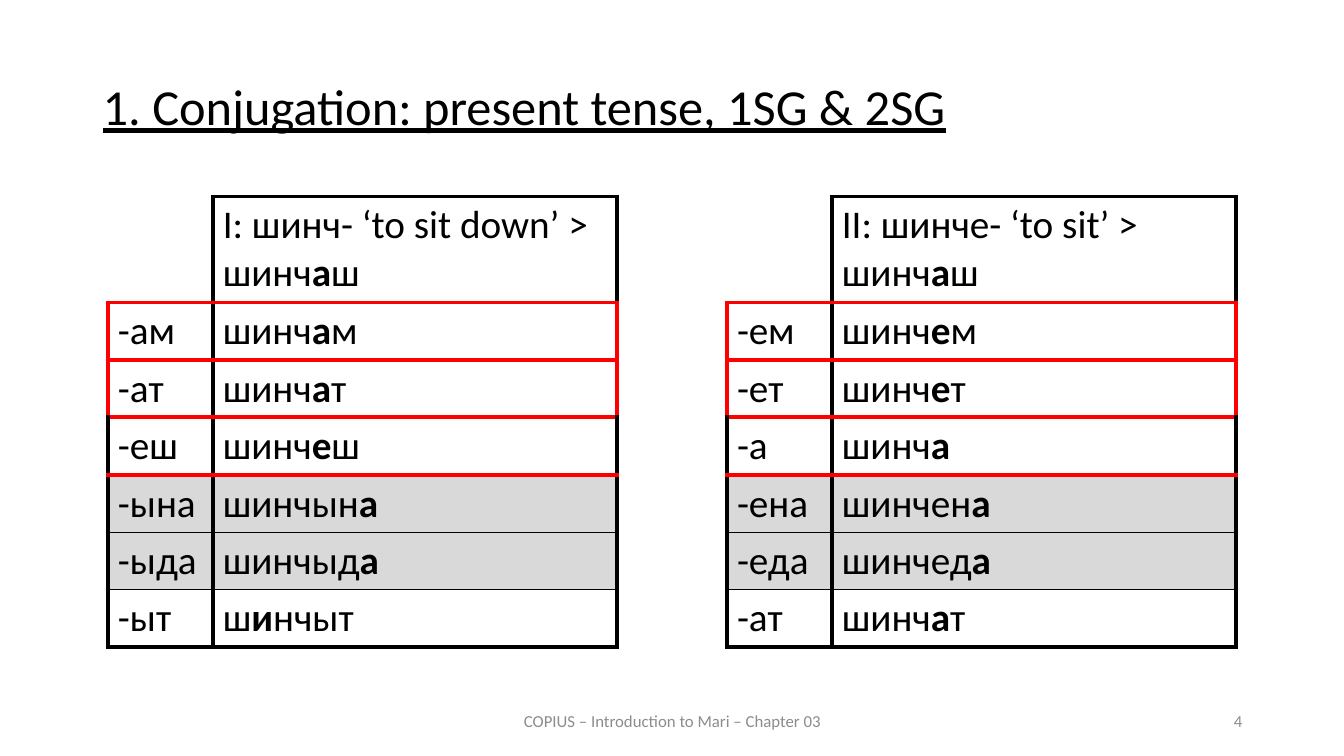
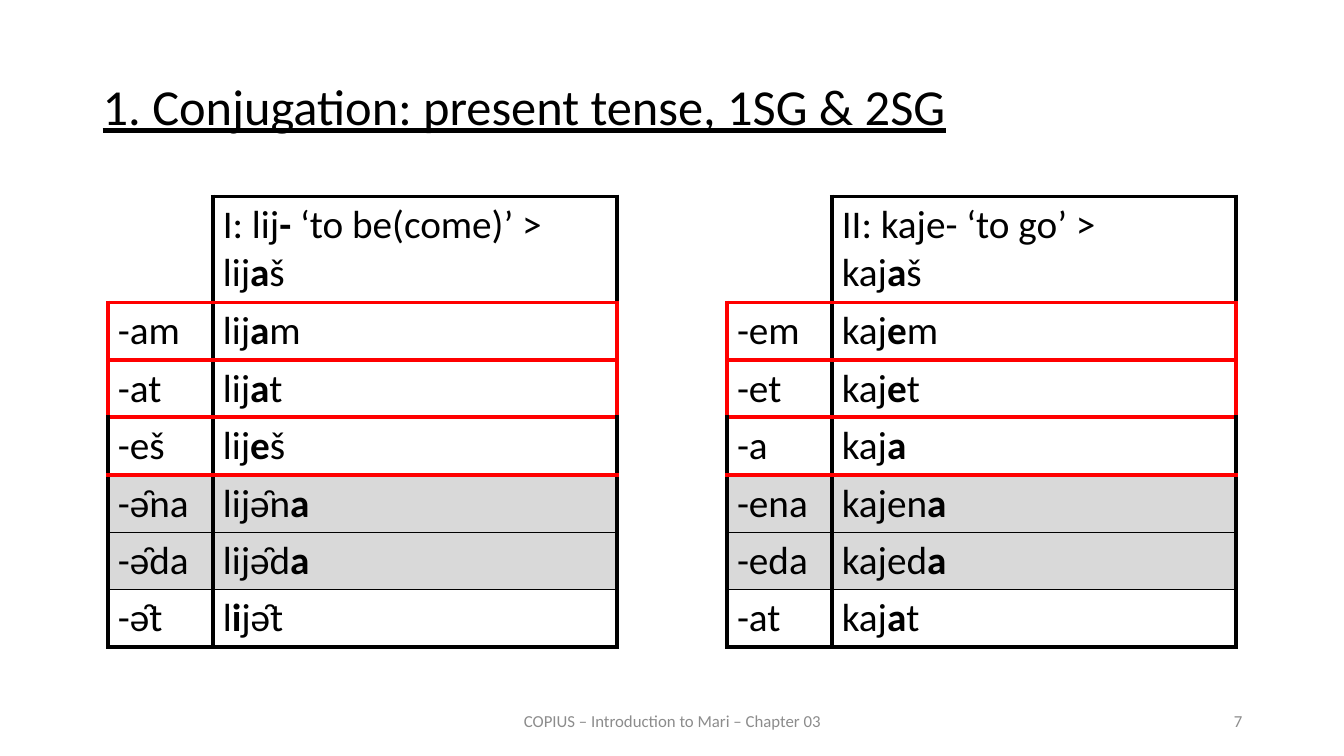
"""Build two slides with Mari present tense conjugation tables."""
import pptx
import pptx.dml.color
import pptx.enum.text
import pptx.util
from lxml import etree

Inches = pptx.util.Inches
Pt = pptx.util.Pt
rgb = pptx.dml.color.RGBColor.from_string
ALIGN = pptx.enum.text.PP_ALIGN
ANCHOR = pptx.enum.text.MSO_ANCHOR

FONT = "Calibri"
BLACK, RED, GREY, SHADE = "000000", "FF0000", "8C8C8C", "D9D9D9"
TITLE = "1. Conjugation: present tense, 1SG & 2SG"
FOOTER = "COPIUS – Introduction to Mari – Chapter 03"
NS = "http://schemas.openxmlformats.org/drawingml/2006/main"

TABLE_LEFTS = [1.07, 7.21]
TABLE_TOP = 1.95
COL_WIDTHS = [1.04, 4.01]
ROW_HEIGHTS = [1.05] + [0.57] * 6
BOXED_ROWS = (1, 2)
SHADED_ROWS = (4, 5)
NONE, THICK, THIN, MARKED = None, (BLACK, 3), (BLACK, 1), (RED, 3)
ROW_LINES = [THICK, MARKED, MARKED, MARKED, MARKED, THIN, THIN, THICK]

SLIDES = [
    ("4", [
        [("", "I: шинч- ‘to sit down’ >\nшинч*а*ш"),
         ("-ам", "шинч*а*м"), ("-ат", "шинч*а*т"), ("-еш", "шинч*е*ш"),
         ("-ына", "шинчын*а*"), ("-ыда", "шинчыд*а*"), ("-ыт", "ш*и*нчыт")],
        [("", "II: шинче- ‘to sit’ >\nшинч*а*ш"),
         ("-ем", "шинч*е*м"), ("-ет", "шинч*е*т"), ("-а", "шинч*а*"),
         ("-ена", "шинчен*а*"), ("-еда", "шинчед*а*"), ("-ат", "шинч*а*т")],
    ]),
    ("7", [
        [("", "I: lij*-* ‘to be(come)’ >\nlij*a*š"),
         ("-am", "lij*a*m"), ("-at", "lij*a*t"), ("-eš", "lij*e*š"),
         ("-ə̑na", "lijə̑n*a*"), ("-ə̑da", "lijə̑d*a*"), ("-ə̑t", "l*i*jə̑t")],
        [("", "II: kajе- ‘to go’ >\nkaj*a*š"),
         ("-em", "kaj*e*m"), ("-et", "kaj*e*t"), ("-a", "kaj*a*"),
         ("-ena", "kajen*a*"), ("-eda", "kajed*a*"), ("-at", "kaj*a*t")],
    ]),
]


def write(tf, text, size, color):
    """Write lines of text, with the parts between asterisks in bold."""
    tf.text = "\n" * text.count("\n")
    for p, line in zip(tf.paragraphs, text.split("\n")):
        for i, part in enumerate(line.split("*")):
            if part:
                r = p.add_run()
                r.text = part
                r.font.name = FONT
                r.font.size = Pt(size)
                r.font.bold = i % 2 == 1
                r.font.color.rgb = rgb(color)


def set_border(cell, side, line):
    """Draw one side of a cell from a colour and a width, or hide it."""
    tc_pr = cell._tc.get_or_add_tcPr()
    ln = etree.SubElement(tc_pr, f"{{{NS}}}ln{side}")
    if line is None:
        etree.SubElement(ln, f"{{{NS}}}noFill")
    else:
        color, width = line
        ln.set("w", str(Pt(width)))
        fill = etree.SubElement(ln, f"{{{NS}}}solidFill")
        etree.SubElement(fill, f"{{{NS}}}srgbClr", val=color)


prs = pptx.Presentation()
prs.slide_width = Inches(13.33)
prs.slide_height = Inches(7.5)

for number, tables in SLIDES:
    s = prs.slides.add_slide(prs.slide_layouts[6])

    texts = [
        (TITLE, 0.92, 0.76, 11.5, 5.98, 36, BLACK, ALIGN.JUSTIFY, ANCHOR.TOP),
        (FOOTER, 4.42, 6.95, 4.5, 0.4, 12, GREY, ALIGN.CENTER, ANCHOR.MIDDLE),
        (number, 9.42, 6.95, 3, 0.4, 12, GREY, ALIGN.RIGHT, ANCHOR.MIDDLE),
    ]
    for text, left, top, width, height, size, color, align, anchor in texts:
        sp = s.shapes.add_textbox(Inches(left), Inches(top), Inches(width), Inches(height))
        tf = sp.text_frame
        tf.word_wrap = True
        tf.vertical_anchor = anchor
        write(tf, text, size, color)
        p = tf.paragraphs[0]
        p.alignment = align
        if text == TITLE:
            p.line_spacing = 0.9
            p.space_before = Pt(12)
            p.runs[0].font.underline = True

    for left, rows in zip(TABLE_LEFTS, tables):
        table = s.shapes.add_table(
            len(rows), len(COL_WIDTHS), Inches(left), Inches(TABLE_TOP),
            Inches(sum(COL_WIDTHS)), Inches(sum(ROW_HEIGHTS))).table
        table.first_row = table.horz_banding = False
        for column, width in zip(table.columns, COL_WIDTHS):
            column.width = Inches(width)
        for i, row in enumerate(rows):
            table.rows[i].height = Inches(ROW_HEIGHTS[i])
            outer = MARKED if i in BOXED_ROWS else THICK
            for j, text in enumerate(row):
                cell = table.cell(i, j)
                corner = i == j == 0
                set_border(cell, "L", NONE if corner else THICK if j else outer)
                set_border(cell, "R", outer if j else THICK)
                set_border(cell, "T", NONE if corner else ROW_LINES[i])
                set_border(cell, "B", ROW_LINES[i + 1])
                if i in SHADED_ROWS:
                    cell.fill.solid()
                    cell.fill.fore_color.rgb = rgb(SHADE)
                else:
                    cell.fill.background()
                write(cell.text_frame, text, 28, BLACK)

prs.save("out.pptx")
